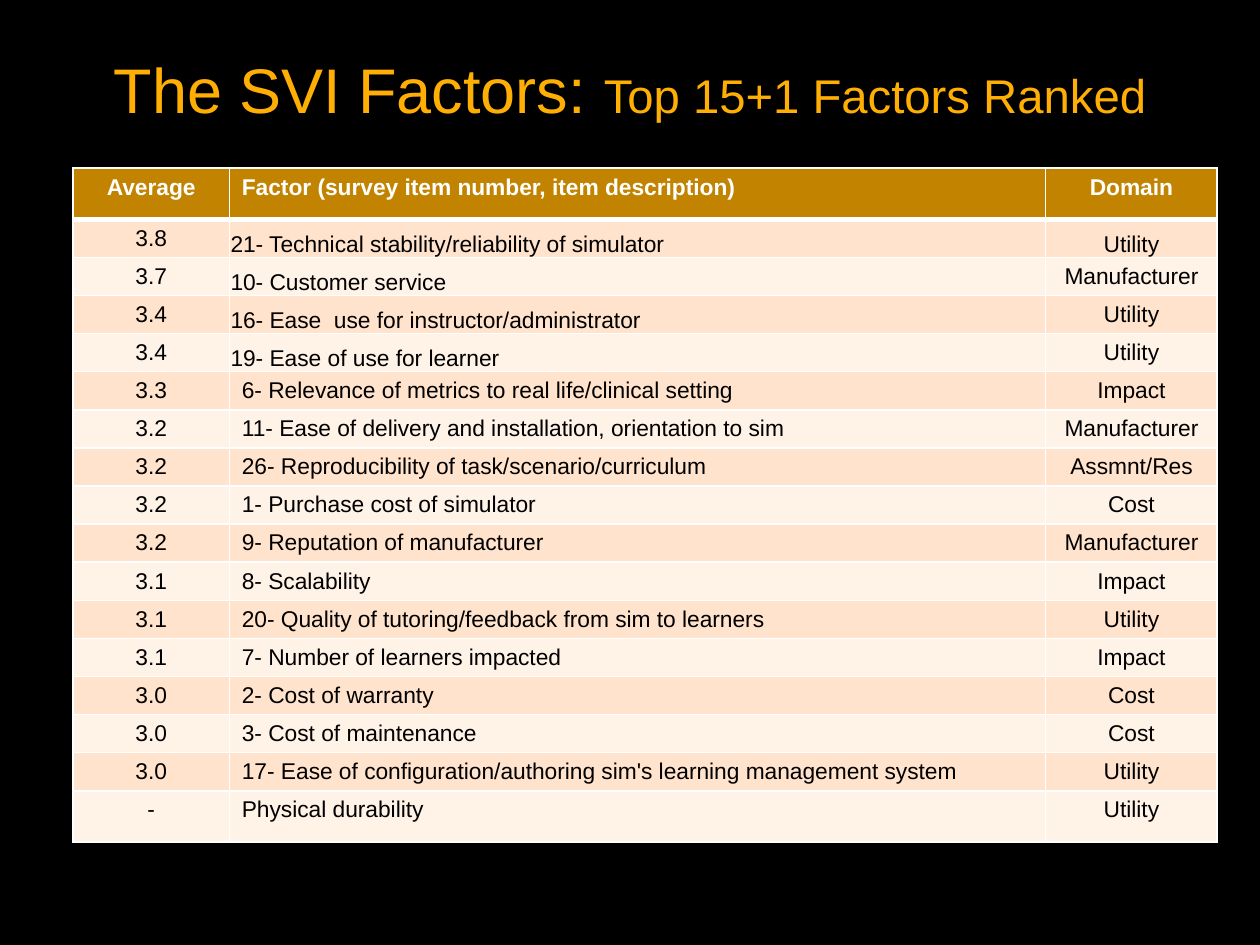
from dataclasses import dataclass

from lxml.etree import SubElement
from pptx import Presentation
from pptx.dml.color import RGBColor
from pptx.enum.text import MSO_ANCHOR, PP_ALIGN
from pptx.oxml.ns import qn
from pptx.util import Inches, Pt


@dataclass(frozen=True)
class Theme:
    """Colours, font and type sizes of the slide."""
    font: str = "Arial"
    back: str = "000000"
    title: str = "FFAF03"
    header: str = "C28400"
    bands: tuple = ("FFE3CC", "FFF2E7")
    light: str = "FFFFFF"
    dark: str = "000000"
    title_size: int = 36
    subtitle_size: int = 27
    body_size: int = 13
    rule: int = 1
    header_rule: int = 3


T = Theme()
WIDTH, HEIGHT = Inches(10), Inches(7.5)
TITLE_BOX = (0.05, 0.04, 0.9, 0.107)
TABLE_BOX = (0.058, 0.178, 0.908, 0.713)
COLUMNS = (1.24, 6.48, 1.36)
TALL, SHORT = 0.405, 0.302
HEADER = ("Average", "Factor (survey item number, item description)", "Domain")
FACTORS = (
    ("3.8", "21- Technical stability/reliability of simulator", "Utility"),
    ("3.7", "10- Customer service", "Manufacturer"),
    ("3.4", "16- Ease  use for instructor/administrator", "Utility"),
    ("3.4", "19- Ease of use for learner", "Utility"),
    ("3.3", "6- Relevance of metrics to real life/clinical setting", "Impact"),
    ("3.2", "11- Ease of delivery and installation, orientation to sim", "Manufacturer"),
    ("3.2", "26- Reproducibility of task/scenario/curriculum", "Assmnt/Res"),
    ("3.2", "1- Purchase cost of simulator", "Cost"),
    ("3.2", "9- Reputation of manufacturer", "Manufacturer"),
    ("3.1", "8- Scalability", "Impact"),
    ("3.1", "20- Quality of tutoring/feedback from sim to learners", "Utility"),
    ("3.1", "7- Number of learners impacted", "Impact"),
    ("3.0", "2- Cost of warranty", "Cost"),
    ("3.0", "3- Cost of maintenance", "Cost"),
    ("3.0", "17- Ease of configuration/authoring sim's learning management system", "Utility"),
    ("-", "Physical durability", "Utility"),
)
LOW_CELLS = {(1, 1), (2, 1), (3, 1), (4, 1), (1, 2)}


def place(box):
    """Turn shares of the slide into lengths."""
    return [round(share * side) for share, side in zip(box, (WIDTH, HEIGHT) * 2)]


def add_text(p, text, *, size, color, bold=False, align=PP_ALIGN.LEFT):
    """Add one formatted run to a paragraph."""
    p.alignment = align
    r = p.add_run()
    r.text = text
    r.font.name, r.font.size, r.font.bold = T.font, Pt(size), bold
    r.font.color.rgb = RGBColor.from_string(color)


def set_borders(cell, **widths):
    """Draw the cell's edges in the light colour."""
    pr = cell._tc.get_or_add_tcPr()
    for edge in "LRTB":
        ln = SubElement(pr, qn(f"a:ln{edge}"), w=str(Pt(widths.get(edge, T.rule))))
        SubElement(SubElement(ln, qn("a:solidFill")), qn("a:srgbClr"), val=T.light)


def fill_cell(cell, text, row, col):
    """Write, fill and frame one cell by its place in the table."""
    head = row == 0
    set_borders(cell, **({"B": T.header_rule} if head else {"T": T.header_rule} if row == 1 else {}))
    cell.fill.solid()
    cell.fill.fore_color.rgb = RGBColor.from_string(T.header if head else T.bands[(row - 1) % 2])
    if (row, col) in LOW_CELLS:
        cell.vertical_anchor = MSO_ANCHOR.BOTTOM
        cell.margin_left = cell.margin_right = cell.margin_top = Inches(0.01)
        cell.margin_bottom = 0
    add_text(cell.text_frame.paragraphs[0], text, size=T.body_size, bold=head,
             color=T.light if head else T.dark,
             align=PP_ALIGN.LEFT if col == 1 else PP_ALIGN.CENTER)


def add_title(s, box):
    """Place the two-size heading."""
    tf = s.shapes.add_textbox(*place(box)).text_frame
    tf.word_wrap = True
    tf.vertical_anchor = MSO_ANCHOR.MIDDLE
    p = tf.paragraphs[0]
    for text, size in (("The SVI Factors: ", T.title_size), ("Top 15+1 Factors Ranked", T.subtitle_size)):
        add_text(p, text, size=size, color=T.title, align=PP_ALIGN.CENTER)


def add_factor_table(s, box):
    """Place the ranked factors, with taller first and last rows."""
    rows = (HEADER, *FACTORS)
    left, top, width, height = place(box)
    table = s.shapes.add_table(len(rows), len(COLUMNS), left, top, width, height).table
    for column, share in zip(table.columns, COLUMNS):
        column.width = round(width * share / sum(COLUMNS))
    heights = [TALL, *[SHORT] * (len(rows) - 2), TALL]
    for i, values in enumerate(rows):
        table.rows[i].height = round(height * heights[i] / sum(heights))
        for j, text in enumerate(values):
            fill_cell(table.cell(i, j), text, i, j)


def main():
    """Build and save the slide."""
    prs = Presentation()
    prs.slide_width, prs.slide_height = WIDTH, HEIGHT
    s = prs.slides.add_slide(prs.slide_layouts[6])
    s.background.fill.solid()
    s.background.fill.fore_color.rgb = RGBColor.from_string(T.back)
    add_factor_table(s, TABLE_BOX)
    add_title(s, TITLE_BOX)
    prs.save("out.pptx")


if __name__ == "__main__":
    main()
